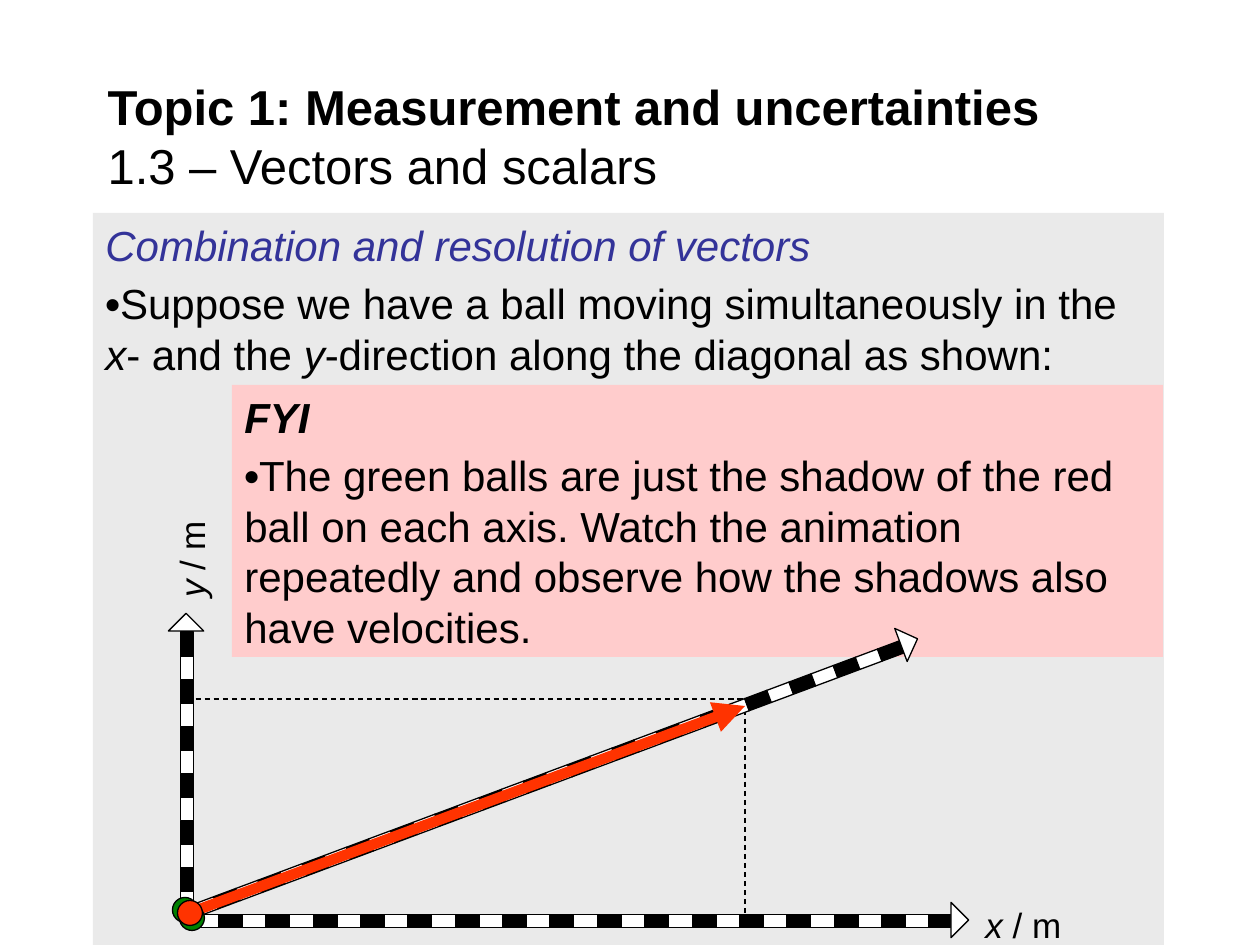
from lxml import etree
from pptx import Presentation
from pptx.dml.color import RGBColor
from pptx.enum.dml import MSO_LINE
from pptx.enum.shapes import MSO_CONNECTOR, MSO_SHAPE
from pptx.enum.text import MSO_ANCHOR, PP_ALIGN
from pptx.oxml.ns import qn
from pptx.util import Pt

RECT, OVAL, TIP = MSO_SHAPE.RECTANGLE, MSO_SHAPE.OVAL, MSO_SHAPE.RIGHT_TRIANGLE
LINE, DASH = MSO_CONNECTOR.STRAIGHT, MSO_LINE.DASH
LEFT, TOP, MID = PP_ALIGN.LEFT, MSO_ANCHOR.TOP, MSO_ANCHOR.MIDDLE

THEME = {
    "font": "Arial", "title": 28, "body": 24, "label": 20,
    "ink": "000000", "head": "333399", "panel": "EAEAEA", "note": "FFCCCC",
    "white": "FFFFFF", "red": "FF3300", "green": "008000",
}
EMU = 914400 / 126

TITLE = [[("Topic 1: Measurement and uncertainties\v", "b", "ink"),
          ("1.3 – Vectors and scalars", "", "ink")]]
PANELS = [
    ((93, 213, 1071, 732), "panel", [
        [("Combination and resolution of vectors", "i", "head")],
        [("•", "b", "ink"),
         ("Suppose we have a ball moving simultaneously in the ", "", "ink"),
         ("x", "i", "ink"), ("- and the ", "", "ink"), ("y", "i", "ink"),
         ("-direction along the diagonal as shown:", "", "ink")]]),
    ((232, 385, 931, 272), "note", [
        [("FYI", "bi", "ink")],
        [("•", "b", "ink"),
         ("The green balls are just the shadow of the red ball on each axis. "
          "Watch the animation repeatedly and observe how the shadows also "
          "have velocities.", "", "ink")]]),
]
AXES = [
    {"first": (187, 903), "last": (187, 644), "count": 12, "turn": 270,
     "tip": (186, 631), "name": "y", "label": (136, 528, 110, 54)},
    {"first": (207, 921), "last": (941, 921), "count": 32, "turn": 0,
     "tip": (951, 920), "name": "x", "label": (973, 897, 110, 54)},
    {"first": (205, 907), "last": (891, 651), "count": 32, "turn": 339.5,
     "tip": (901, 645)},
]
SEG, HEAD, BALL = (24, 13), (25, 25), (25, 25)
FRAME = (183, 699, 562, 221)
ARROW = (745, 706, 192, 912)
BALLS = [((185, 910), "green"), ((192, 918), "green"), ((190, 913), "red")]


def px(*nums):
    return [round(n * EMU) for n in nums]


def color(key):
    return RGBColor.from_string(THEME[key])


def around(mid, size):
    return (mid[0] - size[0] / 2, mid[1] - size[1] / 2, *size)


def draw(home, kind, box, fill=None, line=None, turn=0):
    shape = home.add_shape(kind, *px(*box))
    shape.shadow.inherit = False
    shape.rotation = turn
    if fill:
        shape.fill.solid()
        shape.fill.fore_color.rgb = color(fill)
    else:
        shape.fill.background()
    if line:
        shape.line.color.rgb = color(line)
        shape.line.width = Pt(0.75)
    else:
        shape.line.fill.background()
    return shape


def write(shape, paras, size, gap=0, anchor=TOP):
    frame = shape.text_frame
    frame.word_wrap = True
    frame.vertical_anchor = anchor
    for n, runs in enumerate(paras):
        para = frame.add_paragraph() if n else frame.paragraphs[0]
        para.alignment = LEFT
        para.space_before = Pt(gap)
        for text, style, tint in runs:
            start, *rest = text.split("\v")
            run = para.add_run()
            run.text = start
            look = {"name": THEME["font"], "size": Pt(THEME[size]),
                    "bold": "b" in style, "italic": "i" in style}
            for key, value in look.items():
                setattr(run.font, key, value)
            run.font.color.rgb = color(tint)
            if rest:
                para.add_line_break()


def add_axis(home, axis):
    group = home.add_group_shape().shapes
    (x, y), (ex, ey) = axis["first"], axis["last"]
    for n in range(axis["count"]):
        part = n / (axis["count"] - 1)
        mid = (x + (ex - x) * part, y + (ey - y) * part)
        draw(group, RECT, around(mid, SEG), ("white", "ink")[n % 2], "ink", axis["turn"])
    tip = draw(group, TIP, around(axis["tip"], HEAD), "white", "ink",
               (axis["turn"] - 45) % 360)
    tip.element.spPr.find(qn("a:xfrm")).set("flipH", "1")
    if "name" in axis:
        box = group.add_textbox(*px(*axis["label"]))
        box.rotation = axis["turn"]
        write(box, [[(axis["name"], "i", "ink"), (" / m", "", "ink")]], "label")


def add_arrow(home):
    arrow = home.add_connector(LINE, *px(*ARROW))
    arrow.line.color.rgb = color("red")
    arrow.line.width = Pt(6)
    etree.SubElement(arrow.line._get_or_add_ln(), qn("a:headEnd"), type="triangle")
    etree.SubElement(arrow.element.spPr, qn("a:effectLst"))


def main():
    deck = Presentation()
    deck.slide_width, deck.slide_height = px(1260, 945)
    slide = deck.slides.add_slide(deck.slide_layouts[5])
    home = slide.shapes
    title = home.title
    title.left, title.top, title.width, title.height = px(95, 73, 1071, 124)
    write(title, TITLE, "title", anchor=MID)
    for box, fill, paras in PANELS:
        write(draw(home, RECT, box, fill), paras, "body", 4.8)
    draw(home, RECT, FRAME, line="ink").line.dash_style = DASH
    for axis in AXES:
        add_axis(home, axis)
    add_arrow(home)
    for mid, fill in BALLS:
        draw(home, OVAL, around(mid, BALL), fill, "ink")
    deck.save("out.pptx")


if __name__ == "__main__":
    main()
